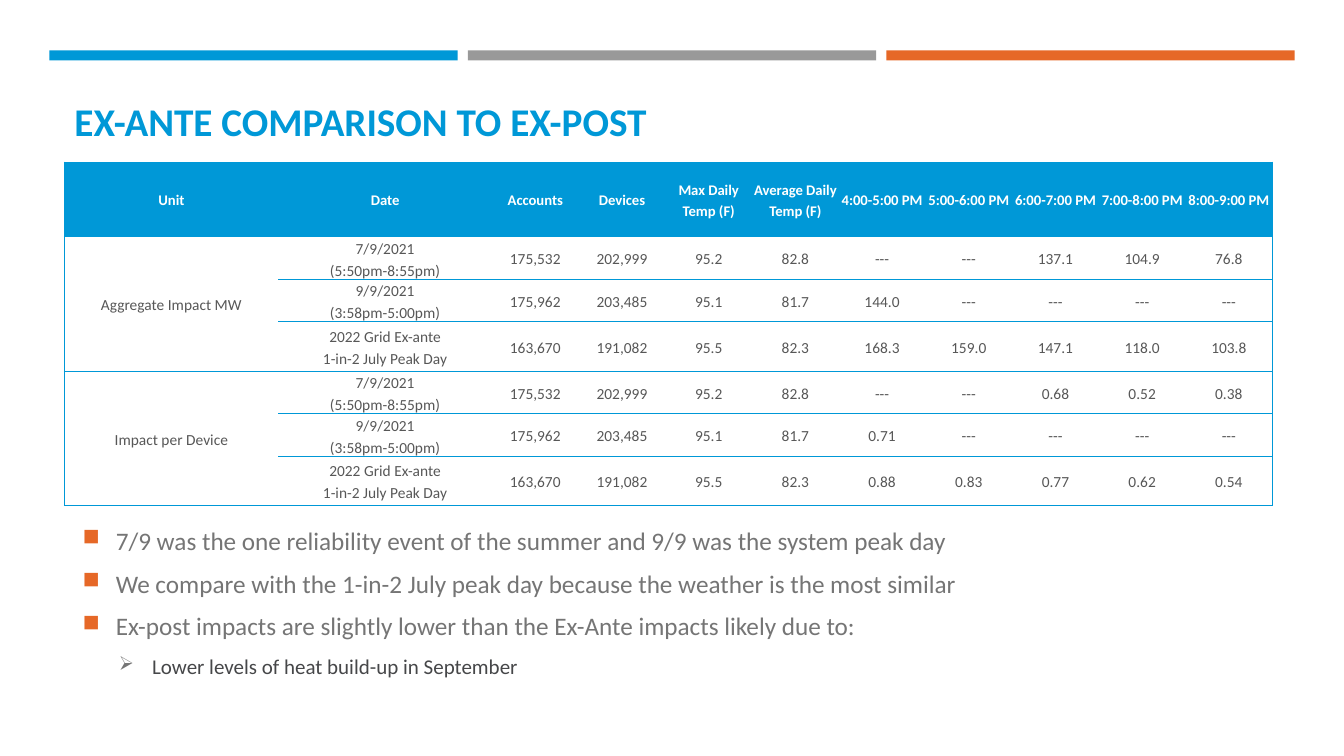
from dataclasses import dataclass
from typing import Any

from lxml import etree
from pptx import Presentation, util as u
from pptx.dml.color import RGBColor
from pptx.enum import shapes, text
from pptx.oxml import ns

BLUE = RGBColor(0x00, 0x98, 0xD7)
ORANGE = RGBColor(0xE6, 0x68, 0x27)
SILVER = RGBColor(0x99, 0x99, 0x99)
GRAY = RGBColor(0x75, 0x75, 0x75)
DARK = RGBColor(0x46, 0x47, 0x49)
INK = RGBColor(0x57, 0x57, 0x57)
WHITE = RGBColor(0xFF, 0xFF, 0xFF)
FONT = "Calibri"


@dataclass
class Bar:
    left: float
    color: RGBColor


@dataclass
class Style:
    size: float
    color: RGBColor
    bold: bool = False


@dataclass
class Point:
    words: str
    mark: str
    tint: RGBColor
    indent: float
    style: Style


TITLE = Style(28, BLUE, True)
HEAD = Style(10.5, WHITE, True)
BODY = Style(11, INK)
MAIN = Style(18, GRAY)
SUB = Style(15, DARK)

BARS = [Bar(0.49, BLUE), Bar(4.64, SILVER), Bar(8.79, ORANGE)]

POINTS = [
    *(Point(words, "■", ORANGE, 0.33, MAIN) for words in (
        "7/9 was the one reliability event of the summer and 9/9 was the system peak day",
        "We compare with the 1-in-2 July peak day because the weather is the most similar",
        "Ex-post impacts are slightly lower than the Ex-Ante impacts likely due to:",
    )),
    Point("Lower levels of heat build-up in September", "➢", GRAY, 0.69, SUB),
]

HOURS = [f"{hour}:00-{hour + 1}:00 PM" for hour in range(4, 9)]
HEADS = ["Unit", "Date", "Accounts", "Devices", "Max Daily Temp (F)",
         "Average Daily Temp (F)", *HOURS]
DAYS = [
    ["7/9/2021\n(5:50pm-8:55pm)", "175,532", "202,999", "95.2", "82.8"],
    ["9/9/2021\n(3:58pm-5:00pm)", "175,962", "203,485", "95.1", "81.7"],
    ["2022 Grid Ex-ante\n1-in-2 July Peak Day", "163,670", "191,082", "95.5", "82.3"],
]
UNITS = {
    "Aggregate Impact MW": ["--- --- 137.1 104.9 76.8", "144.0 --- --- --- ---",
                            "168.3 159.0 147.1 118.0 103.8"],
    "Impact per Device": ["--- --- 0.68 0.52 0.38", "0.71 --- --- --- ---",
                          "0.88 0.83 0.77 0.62 0.54"],
}
WIDTHS = [2.12] * 2 + [0.86] * 9
HEIGHTS = [0.74] + [0.4, 0.4, 0.49] * 2


def apply(target: Any, values: dict[str, Any]) -> None:
    for name, value in values.items():
        setattr(target, name, value)


def paint(font: Any, style: Style) -> None:
    apply(font, {"name": FONT, "size": u.Pt(style.size), "bold": style.bold})
    font.color.rgb = style.color


def box(slide: Any, left: float, top: float, width: float, height: float,
        anchor: Any) -> Any:
    frame = slide.shapes.add_textbox(
        *map(u.Inches, (left, top, width, height))).text_frame
    apply(frame, {"word_wrap": True, "vertical_anchor": anchor})
    return frame


def draw_bar(slide: Any, bar: Bar) -> None:
    shape = slide.shapes.add_shape(
        shapes.MSO_SHAPE.RECTANGLE, *map(u.Inches, (bar.left, 0.5, 4.05, 0.1)))
    shape.shadow.inherit = False
    shape.fill.solid()
    shape.fill.fore_color.rgb = bar.color
    shape.line.fill.background()


def draw_point(para: Any, point: Point, first: bool) -> None:
    props = para._p.get_or_add_pPr()
    props.set("marL", str(u.Inches(point.indent)))
    props.set("indent", str(u.Inches(-0.33)))
    tint = etree.SubElement(props, ns.qn("a:buClr"))
    etree.SubElement(tint, ns.qn("a:srgbClr"), val=str(point.tint))
    etree.SubElement(props, ns.qn("a:buSzPct"), val="92000")
    etree.SubElement(props, ns.qn("a:buChar"), char=point.mark)
    para.text = point.words
    paint(para.font, point.style)
    apply(para, {"space_before": u.Pt(0 if first else 3), "space_after": u.Pt(6)})


def edge(cell: Any, sides: str) -> None:
    props = cell._tc.get_or_add_tcPr()
    for place, side in enumerate("LRTB"):
        line = etree.Element(ns.qn(f"a:ln{side}"), w=str(u.Pt(1)))
        if side in sides:
            fill = etree.SubElement(line, ns.qn("a:solidFill"))
            etree.SubElement(fill, ns.qn("a:srgbClr"), val=str(BLUE))
        else:
            etree.SubElement(line, ns.qn("a:noFill"))
        props.insert(place, line)


def draw_cell(cell: Any, words: str, style: Style, sides: str) -> None:
    side = u.Inches(0.02)
    apply(cell, {"margin_left": side, "margin_right": side, "margin_top": 0,
                 "margin_bottom": 0, "vertical_anchor": text.MSO_ANCHOR.MIDDLE})
    if style is HEAD:
        cell.fill.solid()
        cell.fill.fore_color.rgb = BLUE
    else:
        cell.fill.background()
    edge(cell, sides)
    cell.text = words
    for para in cell.text_frame.paragraphs:
        apply(para, {"alignment": text.PP_ALIGN.CENTER, "line_spacing": 1.15})
        paint(para.font, style)


def draw_table(slide: Any) -> None:
    rows = [HEADS]
    for unit, impacts in UNITS.items():
        for step, (day, values) in enumerate(zip(DAYS, impacts)):
            rows.append(["" if step else unit, *day, *values.split()])
    table = slide.shapes.add_table(
        len(rows), len(HEADS),
        *map(u.Inches, (0.64, 1.61, sum(WIDTHS), sum(HEIGHTS)))).table
    apply(table, {"first_row": False, "horz_banding": False})
    for column, width in zip(table.columns, WIDTHS):
        column.width = u.Inches(width)
    for row, height in zip(table.rows, HEIGHTS):
        row.height = u.Inches(height)
    last = len(HEADS) - 1
    for down, row in enumerate(rows):
        for over, words in enumerate(row):
            sides = "TB" if words else ""
            sides += {0: "L", last: "R"}.get(over, "")
            draw_cell(table.cell(down, over), words, BODY if down else HEAD, sides)
    for top in range(1, len(rows), len(DAYS)):
        table.cell(top, 0).merge(table.cell(top + len(DAYS) - 1, 0))


def main() -> None:
    deck = Presentation()
    apply(deck, {"slide_width": u.Inches(13.33), "slide_height": u.Inches(7.5)})
    slide = deck.slides.add_slide(deck.slide_layouts[6])
    for bar in BARS:
        draw_bar(slide, bar)
    title = box(slide, 0.64, 0.77, 12.06, 0.71, text.MSO_ANCHOR.BOTTOM)
    title.text = "EX-ANTE COMPARISON TO EX-POST"
    paint(title.paragraphs[0].font, TITLE)
    notes = box(slide, 0.72, 5.16, 11.98, 1.61, text.MSO_ANCHOR.TOP)
    for count, point in enumerate(POINTS):
        para = notes.add_paragraph() if count else notes.paragraphs[0]
        draw_point(para, point, count == 0)
    draw_table(slide)
    deck.save("out.pptx")


if __name__ == "__main__":
    main()
